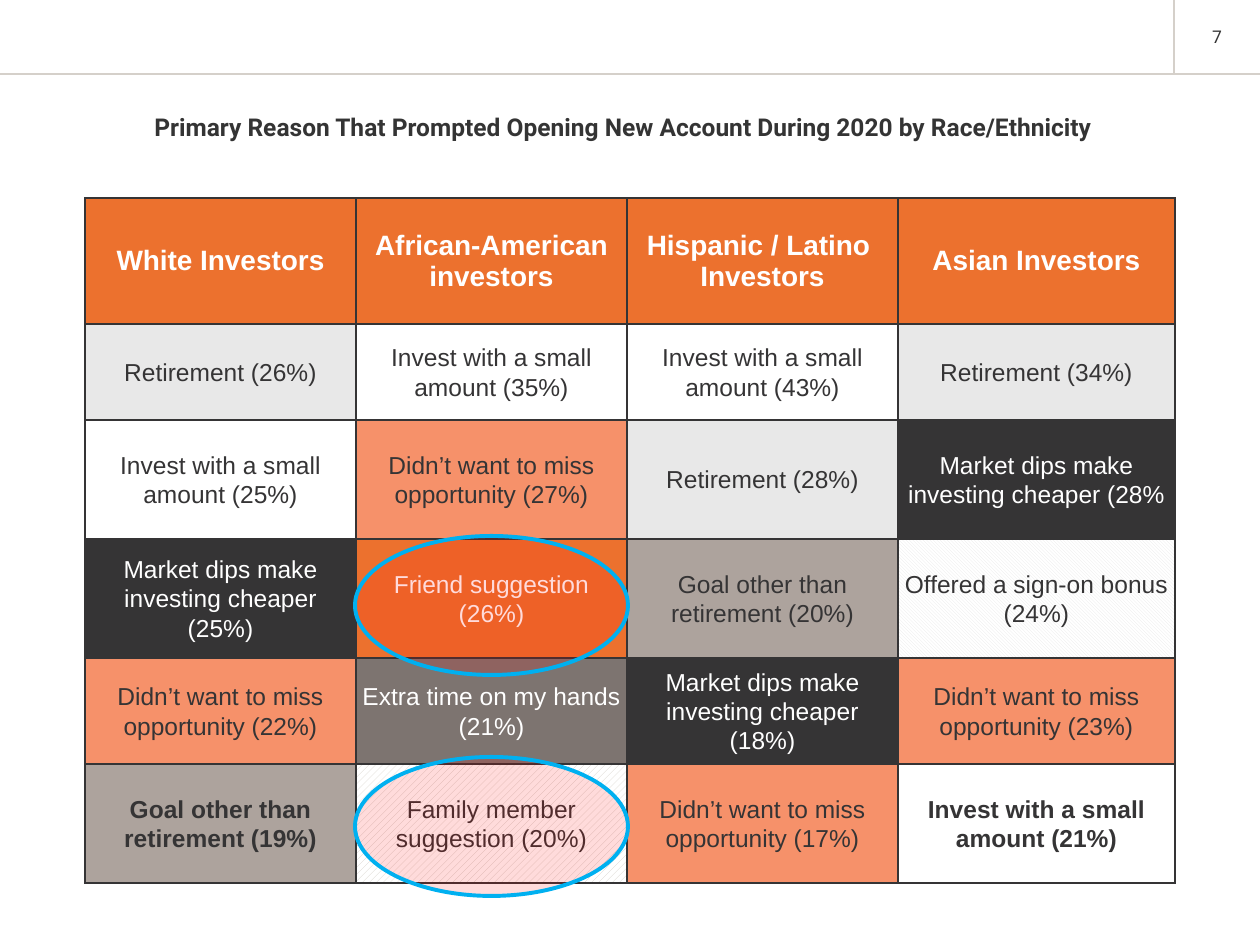
from dataclasses import dataclass
from typing import Optional

from lxml import etree
from pptx import Presentation
from pptx.dml.color import RGBColor
from pptx.enum.dml import MSO_PATTERN
from pptx.enum.shapes import MSO_CONNECTOR, MSO_SHAPE
from pptx.enum.text import MSO_ANCHOR, PP_ALIGN
from pptx.oxml.ns import qn
from pptx.util import Emu, Pt

STRAIGHT = MSO_CONNECTOR.STRAIGHT
OVAL = MSO_SHAPE.OVAL
CENTER = PP_ALIGN.CENTER
TOP, MIDDLE = MSO_ANCHOR.TOP, MSO_ANCHOR.MIDDLE
DOWN_STRIPES = MSO_PATTERN.DARK_DOWNWARD_DIAGONAL
UP_STRIPES = MSO_PATTERN.WIDE_UPWARD_DIAGONAL

WHITE = RGBColor(0xFF, 0xFF, 0xFF)
INK = RGBColor(0x34, 0x34, 0x34)
CHARCOAL = RGBColor(0x35, 0x34, 0x35)
ORANGE = RGBColor(0xEC, 0x71, 0x2E)
SALMON = RGBColor(0xF6, 0x91, 0x6A)
LIGHT_GRAY = RGBColor(0xE8, 0xE8, 0xE8)
TAUPE = RGBColor(0xAD, 0xA3, 0x9D)
DARK_TAUPE = RGBColor(0x7D, 0x74, 0x70)
RULE_GRAY = RGBColor(0xD5, 0xD0, 0xCA)
RED = RGBColor(0xFF, 0x00, 0x00)
BLUE = RGBColor(0x00, 0xB0, 0xF0)

PX_PER_INCH = 126
SLIDE_W, SLIDE_H = 1260, 945
HEADER_H, NUMBER_X = 74, 1174
TABLE_X, TABLE_Y = 85, 198
COLUMN_WIDTHS = (271, 271, 271, 277)
ROW_HEIGHTS = (126, 96, 119, 119, 96, 119)


def px(length: int) -> Emu:
    return Emu(round(length * 914400 / PX_PER_INCH))


@dataclass(frozen=True)
class CellStyle:
    fill: RGBColor
    color: RGBColor = CHARCOAL
    pattern: Optional[MSO_PATTERN] = None
    size: int = 14
    spacing: float = 1.07


@dataclass(frozen=True)
class Answer:
    reason: str
    share: str
    bold: bool = False


HEADING = CellStyle(ORANGE, WHITE, size=16, spacing=1.0)

RETIREMENT = "Retirement"
SMALL = "Invest with a small amount"
MISS = "Didn’t want to miss opportunity"
DIPS = "Market dips make investing cheaper"
FRIEND = "Friend suggestion"
GOAL = "Goal other than retirement"
BONUS = "Offered a sign-on bonus"
TIME = "Extra time on my hands"
FAMILY = "Family member suggestion"

# Each reason keeps one look throughout the table
REASON_STYLES = {
    RETIREMENT: CellStyle(LIGHT_GRAY),
    SMALL: CellStyle(WHITE),
    MISS: CellStyle(SALMON),
    DIPS: CellStyle(CHARCOAL, WHITE),
    FRIEND: CellStyle(ORANGE, WHITE),
    GOAL: CellStyle(TAUPE),
    BONUS: CellStyle(LIGHT_GRAY, pattern=DOWN_STRIPES),
    TIME: CellStyle(DARK_TAUPE, WHITE),
    FAMILY: CellStyle(RULE_GRAY, pattern=UP_STRIPES),
}

GROUPS = ("White Investors", "African-American investors",
          "Hispanic / Latino \vInvestors", "Asian Investors")
RANKING = (
    (Answer(RETIREMENT, "(26%)"), Answer(SMALL, "(35%)"),
     Answer(SMALL, "(43%)"), Answer(RETIREMENT, "(34%)")),
    (Answer(SMALL, "(25%)"), Answer(MISS, "(27%)"),
     Answer(RETIREMENT, "(28%)"), Answer(DIPS, "(28%")),
    (Answer(DIPS, "(25%)"), Answer(FRIEND, "(26%)"),
     Answer(GOAL, "(20%)"), Answer(BONUS, "(24%)")),
    (Answer(MISS, "(22%)"), Answer(TIME, "(21%)"),
     Answer(DIPS, "(18%)"), Answer(MISS, "(23%)")),
    (Answer(GOAL, "(19%)", bold=True), Answer(FAMILY, "(20%)"),
     Answer(MISS, "(17%)"), Answer(SMALL, "(21%)", bold=True)),
)


def write(frame, text: str, *, size: int, color: RGBColor, font: str = "Arial",
          bold: bool = False, spacing: float = 1.0) -> None:
    frame.word_wrap = True
    paragraph = frame.paragraphs[0]
    paragraph.text = text
    paragraph.alignment = CENTER
    paragraph.line_spacing = spacing
    for run in paragraph.runs:
        run.font.name = font
        run.font.size = Pt(size)
        run.font.bold = bold
        run.font.color.rgb = color


def add_label(slide, box: tuple[int, int, int, int], text: str,
              anchor: MSO_ANCHOR, **text_format) -> None:
    frame = slide.shapes.add_textbox(*map(px, box)).text_frame
    frame.vertical_anchor = anchor
    write(frame, text, font="Roboto", color=INK, **text_format)
    if anchor == TOP:
        frame.margin_left = 0


def add_rule(slide, x1: int, y1: int, x2: int, y2: int) -> None:
    rule = slide.shapes.add_connector(STRAIGHT, px(x1), px(y1), px(x2), px(y2))
    rule.line.color.rgb = RULE_GRAY
    rule.line.width = Pt(0.65)
    etree.SubElement(rule._element.spPr, qn("a:effectLst"))


def add_borders(cell) -> None:
    properties = cell._tc.get_or_add_tcPr()
    for index, side in enumerate(("lnL", "lnR", "lnT", "lnB")):
        border = etree.Element(qn(f"a:{side}"), w=str(Pt(1)))
        fill = etree.SubElement(border, qn("a:solidFill"))
        etree.SubElement(fill, qn("a:srgbClr"), val=str(CHARCOAL))
        properties.insert(index, border)


def fill_cell(cell, text: str, style: CellStyle, bold: bool) -> None:
    if style.pattern is None:
        cell.fill.solid()
        cell.fill.fore_color.rgb = style.fill
    else:
        cell.fill.patterned()
        cell.fill.pattern = style.pattern
        cell.fill.fore_color.rgb = style.fill
        cell.fill.back_color.rgb = WHITE
    add_borders(cell)
    cell.vertical_anchor = MIDDLE
    cell.margin_left = cell.margin_right = px(6)
    cell.margin_top = cell.margin_bottom = px(6)
    write(cell.text_frame, text, size=style.size, color=style.color,
          bold=bold, spacing=style.spacing)


def add_ranking_table(slide) -> None:
    table = slide.shapes.add_table(
        len(ROW_HEIGHTS), len(COLUMN_WIDTHS), px(TABLE_X), px(TABLE_Y),
        px(sum(COLUMN_WIDTHS)), px(sum(ROW_HEIGHTS))).table
    table.first_row = table.horz_banding = False
    for column, width in zip(table.columns, COLUMN_WIDTHS):
        column.width = px(width)
    for row, height in zip(table.rows, ROW_HEIGHTS):
        row.height = px(height)
    for col, group in enumerate(GROUPS):
        fill_cell(table.cell(0, col), group, HEADING, bold=True)
    for row, answers in enumerate(RANKING, start=1):
        for col, answer in enumerate(answers):
            fill_cell(table.cell(row, col), f"{answer.reason} {answer.share}",
                      REASON_STYLES[answer.reason], answer.bold)


def add_highlight(slide, x: int, y: int, width: int, height: int) -> None:
    ring = slide.shapes.add_shape(OVAL, px(x), px(y), px(width), px(height))
    ring.shadow.inherit = False
    ring.fill.solid()
    ring.fill.fore_color.rgb = RED
    tint = ring._element.spPr.find(qn("a:solidFill"))[0]
    etree.SubElement(tint, qn("a:alpha"), val="14000")
    ring.line.color.rgb = BLUE
    ring.line.width = Pt(2.25)


def main() -> None:
    deck = Presentation()
    deck.slide_width, deck.slide_height = px(SLIDE_W), px(SLIDE_H)
    slide = deck.slides.add_slide(deck.slide_layouts[6])

    # Header rules, page number and title
    add_rule(slide, NUMBER_X, 0, NUMBER_X, HEADER_H)
    add_rule(slide, 0, HEADER_H, SLIDE_W, HEADER_H)
    add_label(slide, (NUMBER_X, 0, SLIDE_W - NUMBER_X, HEADER_H), "7", MIDDLE, size=10)
    add_label(slide, (85, 106, 1089, 108),
              "Primary Reason That Prompted Opening New Account During 2020 by Race/Ethnicity",
              TOP, size=14, bold=True)

    # Reasons by group, with the personal suggestions ringed
    add_ranking_table(slide)
    for ring_y in (536, 757):
        add_highlight(slide, 355, ring_y, 273, 139)

    deck.save("out.pptx")


if __name__ == "__main__":
    main()
